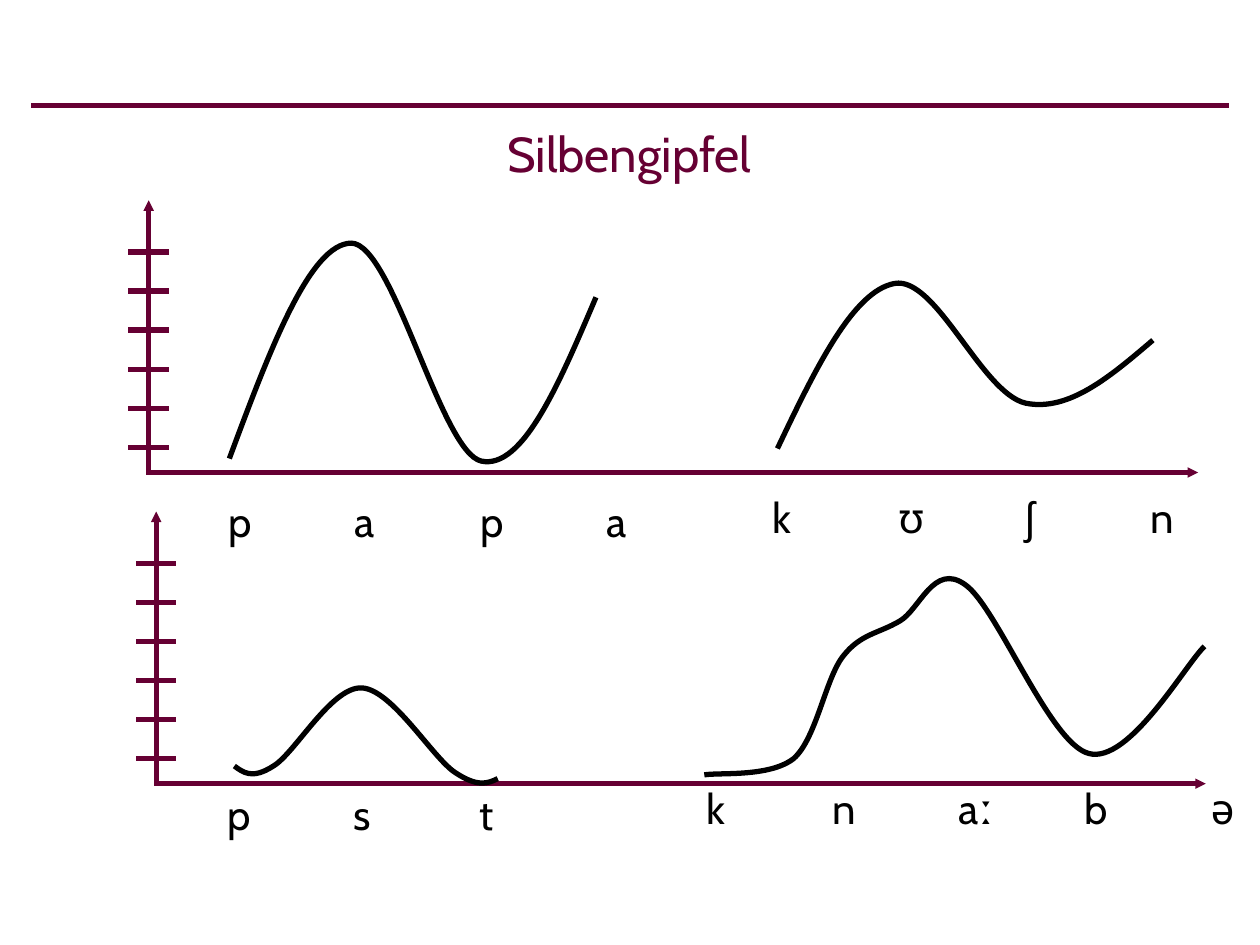
from pptx import Presentation
from pptx.dml.color import RGBColor as Rgb
from pptx.enum.text import MSO_ANCHOR as Anchor, MSO_AUTO_SIZE as Fit, PP_ALIGN as Align
from pptx.oxml.ns import qn
from pptx.util import Inches, Pt
from lxml.etree import SubElement as Sub

HUES = {"wine": "660033", "ink": "000000"}
FONT = "Cabin"

deck = Presentation()
deck.slide_width, deck.slide_height = Inches(10), Inches(7.5)
CELL = deck.slide_width // 10  # the grid has 10 columns and 7.5 rows
FINE = 100  # curve points lie on hundredths of a cell
slide = deck.slides.add_slide(deck.slide_layouts[6])
shapes = slide.shapes


def rule(x1, y1, x2, y2, arrow=False):
    """Draw a straight wine-red line between two grid points."""
    ends = [round(v * CELL) for v in (x1, y1, x2, y2)]
    line = shapes.add_connector(1, *ends)
    line.line.color.rgb = Rgb.from_string(HUES["wine"])
    line.line.width = Pt(3)
    edge = line.line._get_or_add_ln()
    edge.set("cap", "sq")
    if arrow:
        Sub(edge, qn("a:tailEnd"), type="triangle", w="sm", len="sm")
    Sub(line._element.spPr, qn("a:effectLst"))


def label(text, box, size, hue, wrap):
    """Write centred text with a tab stop at every column."""
    frame = shapes.add_textbox(*[round(v * CELL) for v in box]).text_frame
    form = {
        "word_wrap": wrap,
        "auto_size": Fit.NONE if wrap else Fit.SHAPE_TO_FIT_TEXT,
        "vertical_anchor": Anchor.MIDDLE if wrap else Anchor.TOP,
    }
    for key, val in form.items():
        setattr(frame, key, val)
    para = frame.paragraphs[0]
    para.alignment = Align.CENTER
    if "\t" in text:
        stops = Sub(para._p.get_or_add_pPr(), qn("a:tabLst"))
        for col in range(1, text.count("\t") + 1):
            Sub(stops, qn("a:tab"), pos=str(col * CELL), algn="l")
    run = para.add_run()
    run.text = text
    for key, val in {"name": FONT, "size": Pt(size)}.items():
        setattr(run.font, key, val)
    run.font.color.rgb = Rgb.from_string(HUES[hue])


# Title under its rule
rule(0.27, 0.84, 9.73, 0.84)
label("Silbengipfel", (0.27, 0.84, 9.45, 0.74), 28, "wine", True)

# Two pairs of axes, each with six ticks
for x, y in [(1.18, 3.75), (1.24, 6.22)]:
    rule(x, y, x, y - 2.16, arrow=True)
    rule(x, y, x + 8.33, y, arrow=True)
    for step in range(6):
        tick = y - 0.2 - step * 1.55 / 5
        rule(x - 0.14, tick, x + 0.14, tick)

# Sounds, their box, and the curve: a start, then Bézier triples
WORDS = [
    ("p a p a", (1.7, 3.88, 3.39, 0.5), [
        (1.82, 3.64),
        (2.14, 2.78), (2.46, 1.93), (2.79, 1.93),
        (3.12, 1.94), (3.5, 3.59), (3.82, 3.66),
        (4.15, 3.73), (4.44, 3.04), (4.73, 2.36)]),
    ("k ʊ ʃ n", (6.03, 3.85, 3.39, 0.5), [
        (6.17, 3.56),
        (6.47, 2.93), (6.77, 2.31), (7.1, 2.25),
        (7.43, 2.19), (7.79, 3.12), (8.14, 3.2),
        (8.48, 3.27), (8.81, 2.99), (9.15, 2.7)]),
    ("p s t", (1.7, 6.21, 2.32, 0.5), [
        (1.86, 6.08),
        (1.93, 6.13), (2, 6.19), (2.17, 6.08),
        (2.34, 5.98), (2.63, 5.45), (2.87, 5.46),
        (3.11, 5.47), (3.43, 6.01), (3.61, 6.13),
        (3.79, 6.25), (3.87, 6.22), (3.95, 6.18)]),
    ("k n aː b ə", (5.51, 6.16, 4.39, 0.5), [
        (5.59, 6.15),
        (5.71, 6.13), (6.11, 6.17), (6.3, 6.02),
        (6.48, 5.86), (6.55, 5.39), (6.69, 5.21),
        (6.83, 5.03), (6.97, 5.03), (7.14, 4.93),
        (7.3, 4.84), (7.41, 4.46), (7.66, 4.64),
        (7.91, 4.81), (8.33, 5.9), (8.64, 5.98),
        (8.96, 6.07), (9.41, 5.27), (9.56, 5.13)]),
]
for sounds, box, dots in WORDS:
    label(sounds.replace(" ", "\t"), box, 24, "ink", False)
    dots = [(round(x * FINE), round(y * FINE)) for x, y in dots]
    pen = shapes.build_freeform(*dots[0], scale=CELL / FINE)
    pen.add_line_segments(dots[1:], close=False)
    curve = pen.convert_to_shape()
    curve.shadow.inherit = False
    curve.fill.background()
    curve.line.color.rgb = Rgb.from_string(HUES["ink"])
    curve.line.width = Pt(3)

    # Each three straight segments become one cubic curve
    trail = next(curve._element.iter(qn("a:path")))
    legs = trail.findall(qn("a:lnTo"))
    for i in range(0, len(legs), 3):
        bend = Sub(trail, qn("a:cubicBezTo"))
        for leg in legs[i:i + 3]:
            bend.append(leg[0])
            trail.remove(leg)

deck.save("out.pptx")
